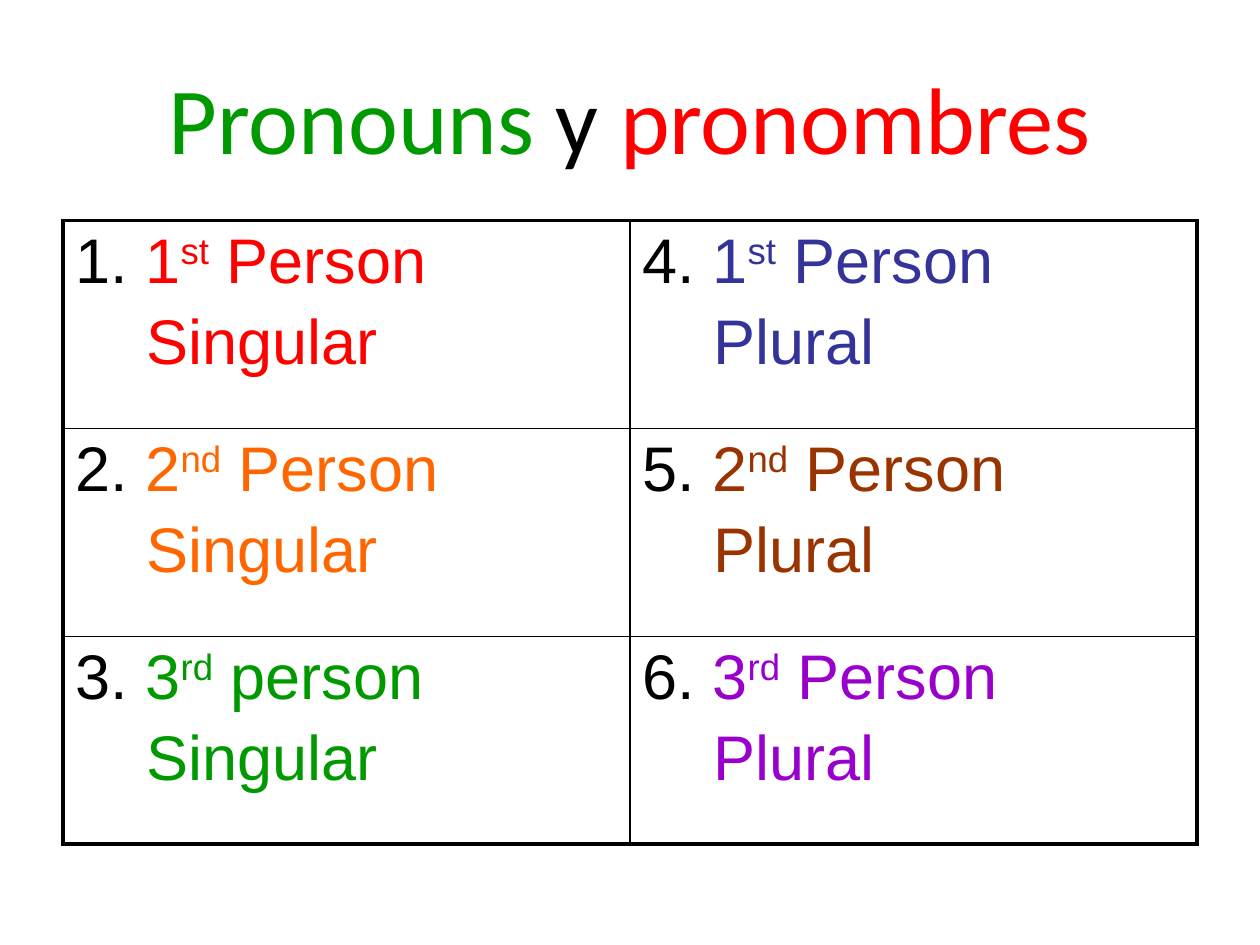
from lxml import etree
from pptx import Presentation
from pptx import util as u
from pptx.dml.color import RGBColor
from pptx.enum import text
from pptx.oxml.ns import qn

COLORS = {
    "black": "000000", "red": "FF0000", "orange": "FF6600", "green": "009900",
    "blue": "333399", "brown": "993300", "purple": "9900CC",
}
TITLE = [("Pronouns ", "green"), ("y", "black"), (" pronombres", "red")]
PERSONS = [
    [("1. ", "1", "st", " Person", "Singular", "red"),
     ("4. ", "1", "st", " Person", "Plural", "blue")],
    [("2. ", "2", "nd", " Person", "Singular", "orange"),
     ("5. ", "2", "nd", " Person", "Plural", "brown")],
    [("3. ", "3", "rd", " person", "Singular", "green"),
     ("6. ", "3", "rd", " Person", "Plural", "purple")],
]
ROWS, COLS = len(PERSONS), len(PERSONS[0])
OUTER, INNER = 2.25, 1
INDENT = 0.56

prs = Presentation()
prs.slide_width, prs.slide_height = u.Inches(10), u.Inches(7.5)
W, H = prs.slide_width, prs.slide_height
s = prs.slides.add_slide(prs.slide_layouts[6])


def set_font(p, name, size):
    p.font.name, p.font.size = name, u.Pt(size)


def add_run(p, words, color, raised=False):
    r = p.add_run()
    r.text = words
    r.font.color.rgb = RGBColor.from_string(COLORS[color])
    if raised:
        r.font._element.set("baseline", "30000")


def add_border(cell, side, width):
    ln = etree.SubElement(cell._tc.get_or_add_tcPr(), qn(f"a:ln{side}"),
                          w=str(u.Pt(width)))
    fill = etree.SubElement(ln, qn("a:solidFill"))
    etree.SubElement(fill, qn("a:srgbClr"), val=COLORS["black"])


def fill_cell(cell, number, digit, suffix, person, count, color):
    tf = cell.text_frame
    p = tf.paragraphs[0]
    set_font(p, "Arial", 36)
    add_run(p, number, "black")
    add_run(p, digit, color)
    add_run(p, suffix, color, raised=True)
    add_run(p, person, color)
    p = tf.add_paragraph()
    set_font(p, "Arial", 36)
    p.space_before = u.Pt(6)
    p._p.get_or_add_pPr().set("marL", str(u.Inches(INDENT)))
    add_run(p, count, color)


title = s.shapes.add_textbox(int(W * 0.05), int(H * 0.04), int(W * 0.9), int(H / 6))
tf = title.text_frame
tf.word_wrap = True
tf.vertical_anchor = text.MSO_ANCHOR.MIDDLE
p = tf.paragraphs[0]
p.alignment = text.PP_ALIGN.CENTER
set_font(p, "Calibri", 54)
for words, color in TITLE:
    add_run(p, words, color)

frame = s.shapes.add_table(ROWS, COLS, int(W * 0.05), int(H * 0.7 / 3),
                           int(W * 0.9), int(H * 0.66))
table = frame.table
table.first_row = table.horz_banding = False
for i, row in enumerate(PERSONS):
    for j, entry in enumerate(row):
        cell = table.cell(i, j)
        fill_cell(cell, *entry)
        edges = {"L": j == 0, "R": j == COLS - 1, "T": i == 0, "B": i == ROWS - 1}
        for side, is_outer in edges.items():
            add_border(cell, side, OUTER if is_outer else INNER)
        cell.fill.background()

prs.save("out.pptx")
